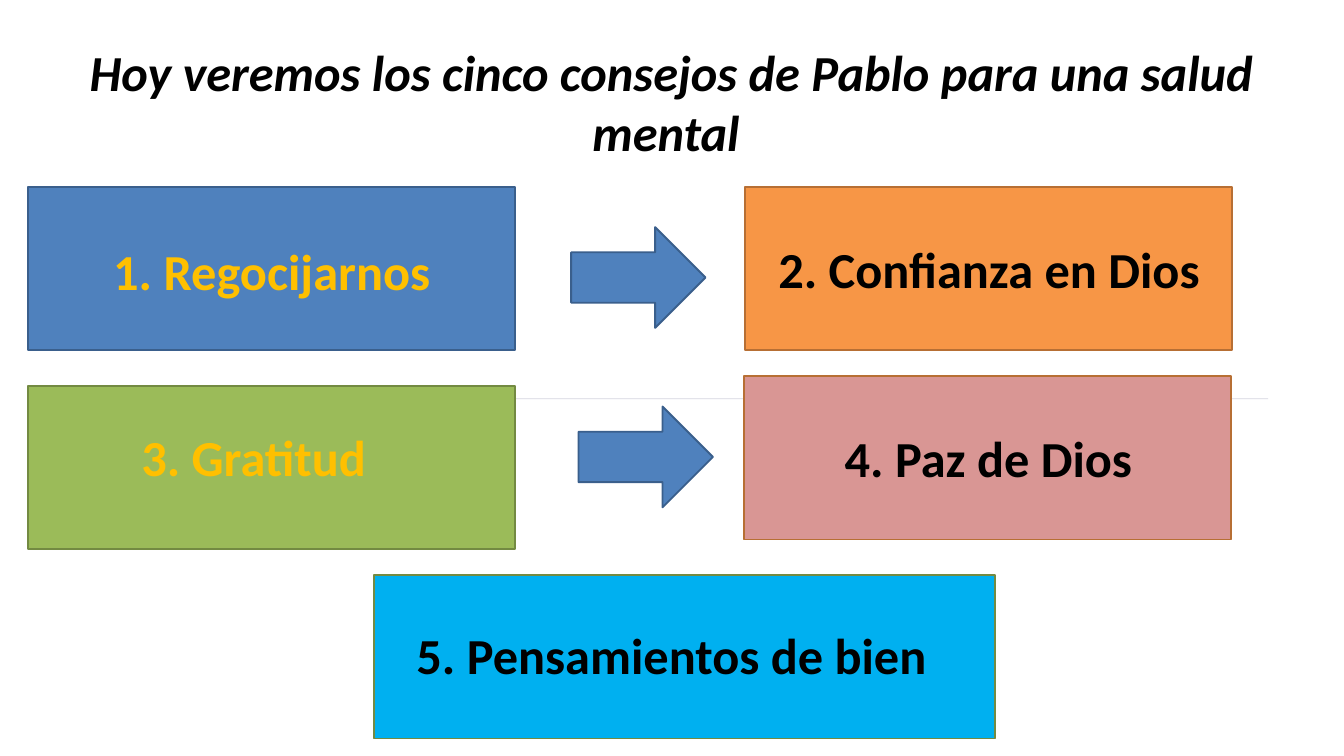
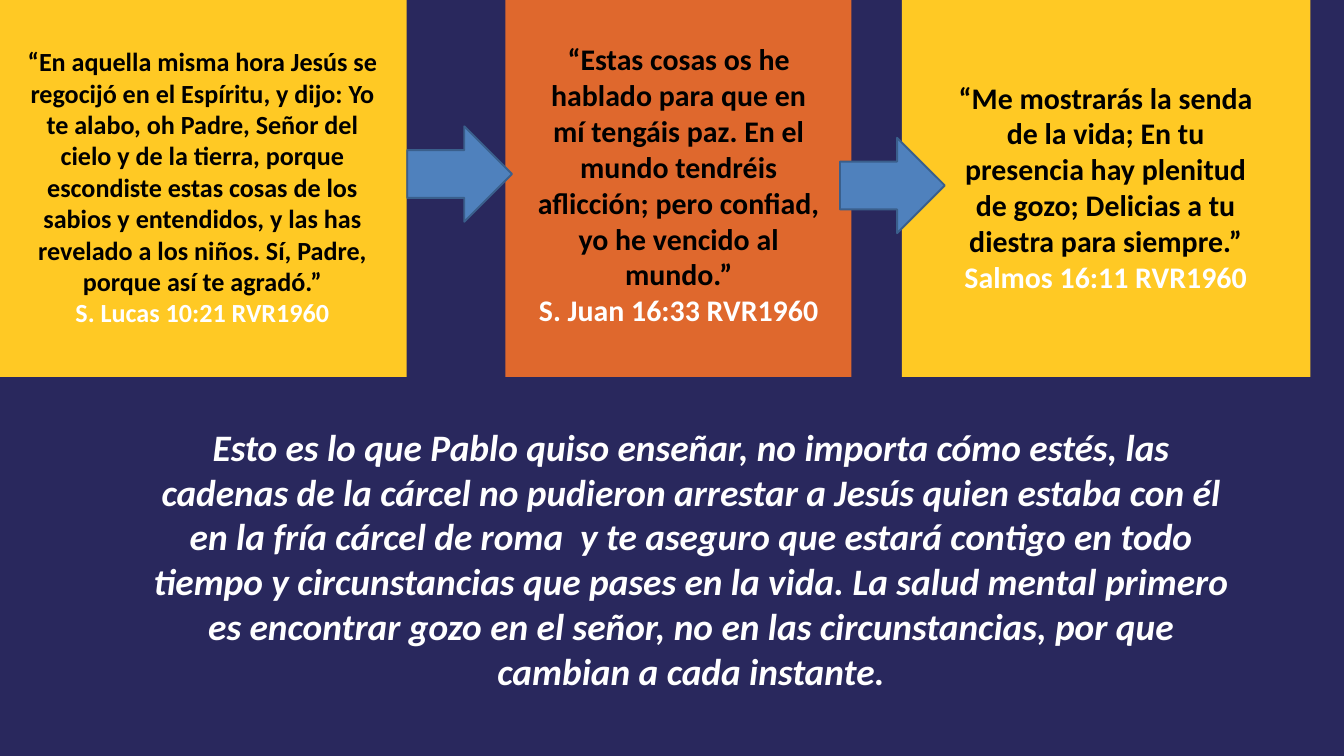
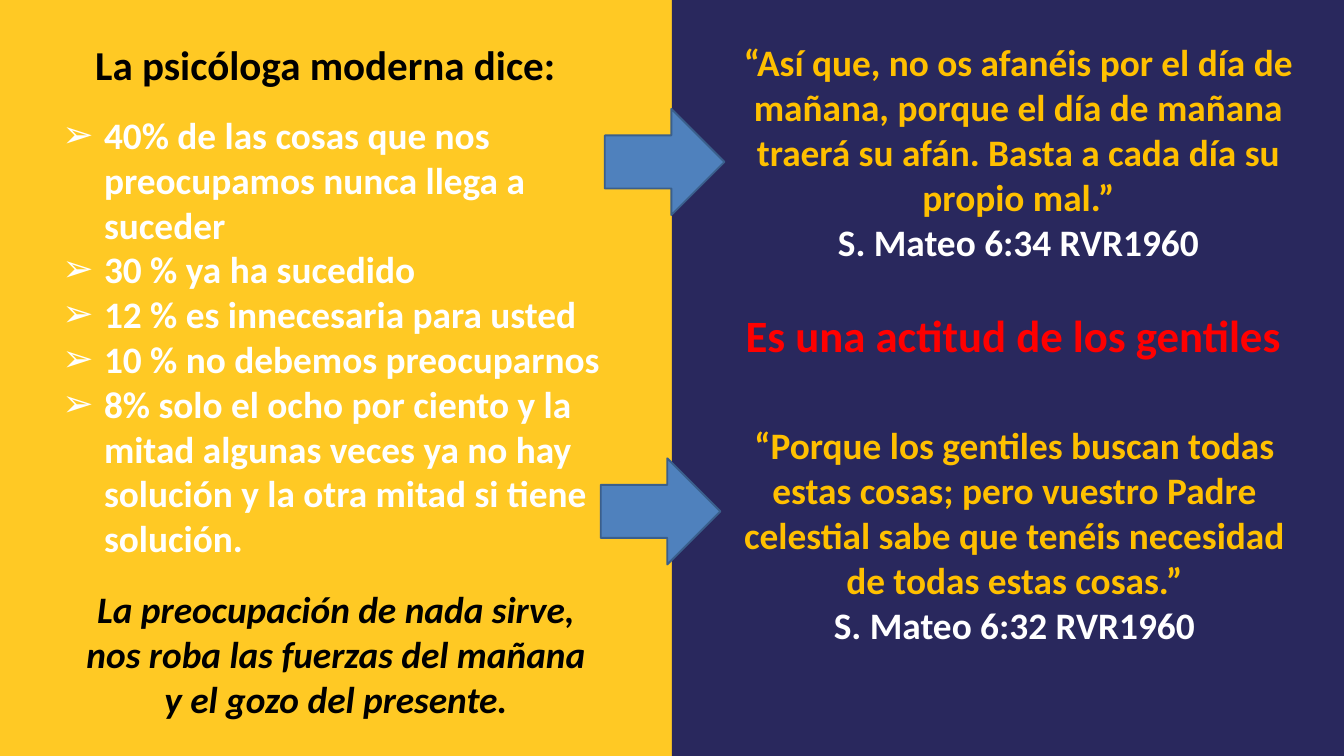
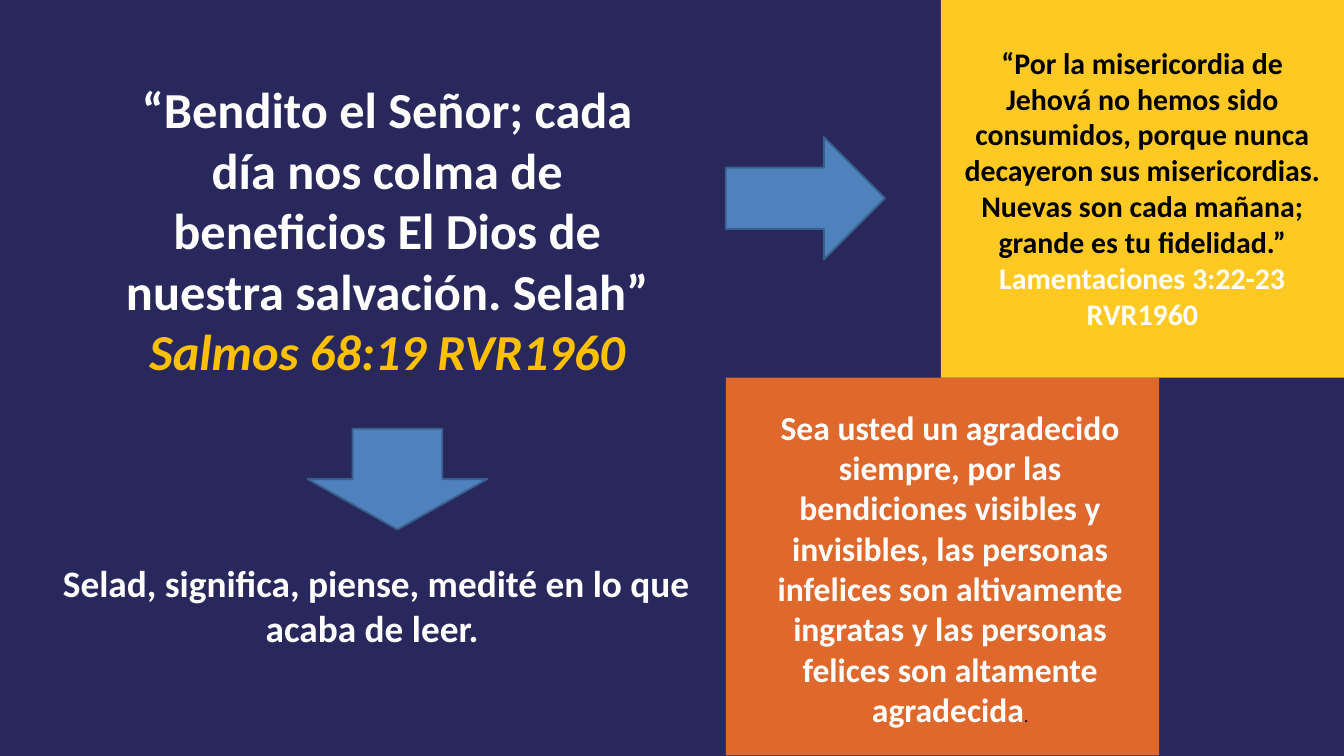
from lxml import etree
from pptx import Presentation
from pptx import util as u
from pptx.dml.color import RGBColor
from pptx.enum import shapes, text
from pptx.oxml import ns

COLORS = {
    "navy": "29285D", "yellow": "FFC924", "orange": "DF682D",
    "white": "FFFFFF", "black": "000000", "gold": "FFC000", "red": "FF0000",
    "blue": "4F81BD", "blue_edge": "3A5F8C",
    "amber": "F79646", "amber_edge": "B76F34",
    "green": "9BBB59", "green_edge": "738A42",
    "rose": "D99694", "sky": "00B0F0",
}
TITLE_ONLY, BLANK = 5, 6


def color(name):
    return RGBColor.from_string(COLORS[name])


class SlideBuilder:
    """Holds the deck style and the page being built."""

    font = "Calibri"
    edge_width = 2

    def __init__(self):
        self.deck = Presentation()
        self.deck.slide_width = u.Inches(20)
        self.deck.slide_height = u.Inches(11.25)
        self.page = None

    def new_page(self, background, layout=BLANK):
        self.page = self.deck.slides.add_slide(self.deck.slide_layouts[layout])
        fill = self.page.background.fill
        fill.solid()
        fill.fore_color.rgb = color(background)

    def shape(self, kind, at, fill, edge=None, opacity=None):
        shape = self.page.shapes.add_shape(kind, *map(u.Inches, at))
        shape.shadow.inherit = False
        shape.fill.solid()
        shape.fill.fore_color.rgb = color(fill)
        if edge:
            shape.line.color.rgb = color(edge)
            shape.line.width = u.Pt(self.edge_width)
        else:
            shape.line.fill.background()
        if opacity:
            tint = shape.fill._xPr.find(".//" + ns.qn("a:srgbClr"))
            etree.SubElement(tint, ns.qn("a:alpha"), val=str(opacity * 1000))

    def panel(self, at, fill, edge=None, opacity=None):
        self.shape(shapes.MSO_SHAPE.RECTANGLE, at, fill, edge, opacity)

    def arrow(self, at, kind=shapes.MSO_SHAPE.RIGHT_ARROW):
        self.shape(kind, at, "blue", "blue_edge")

    def span(self, para, words, size, ink, bold=True, italic=False):
        span = para.add_run()
        span.text = words
        font = span.font
        font.name, font.size = self.font, u.Pt(size)
        font.bold, font.italic = bold, italic
        font.color.rgb = color(ink)

    def prepare(self, frame):
        frame.word_wrap = True
        frame.auto_size = text.MSO_AUTO_SIZE.NONE
        frame.vertical_anchor = text.MSO_ANCHOR.TOP
        para = frame.paragraphs[0]
        para.alignment = text.PP_ALIGN.CENTER
        return para

    def box(self, at):
        return self.page.shapes.add_textbox(*map(u.Inches, at)).text_frame

    def title(self, at, words, size, italic=False):
        title = self.page.shapes.title
        title.left, title.top, title.width, title.height = map(u.Inches, at)
        self.span(self.prepare(title.text_frame), words, size, "black", italic=italic)

    def label(self, at, words, size, ink, italic=False):
        para = self.prepare(self.box(at))
        self.span(para, words, size, ink, italic=italic)
        return para

    def verse(self, at, quote, reference, size, ink, reference_ink="white", italic=False):
        """A quotation with its reference on the following line."""
        para = self.label(at, quote, size, ink)
        para.add_line_break()
        self.span(para, reference, size, reference_ink, italic=italic)

    def bullets(self, at, items, size, ink, indent=0.62):
        frame = self.box(at)
        self.prepare(frame)
        for number, item in enumerate(items):
            para = frame.add_paragraph() if number else frame.paragraphs[0]
            para.alignment = text.PP_ALIGN.LEFT
            self.span(para, item, size, ink)
            props = para._p.get_or_add_pPr()
            props.set("marL", str(u.Inches(indent)))
            props.set("indent", str(-u.Inches(indent)))
            etree.SubElement(props, ns.qn("a:buFont"), typeface="Arial")
            etree.SubElement(props, ns.qn("a:buChar"), char="➢")


def advice_page(show):
    show.new_page("white", TITLE_ONLY)
    show.title((1.12, 0.56, 17.75, 2.22),
               "Hoy veremos los cinco consejos de Pablo para una salud mental ", 54, italic=True)
    show.panel((1.12, 5.93, 17.75, 0.01), "navy", opacity=20)

    # Five pieces of advice: card place, fill, edge, label place, words, ink
    cards = [
        ((0.42, 2.78, 7.25), "blue", "blue_edge",
         (0.92, 3.53, 6.25), "1. Regocijarnos", "gold"),
        ((11.08, 2.78, 7.25), "amber", "amber_edge",
         (11.11, 3.49, 7.22), "2. Confianza en Dios", "black"),
        ((0.42, 5.74, 7.25), "green", "green_edge",
         (0.65, 6.29, 6.25), "3. Gratitud", "gold"),
        ((11.07, 5.6, 7.25), "rose", "amber_edge",
         (11.67, 6.31, 6.08), "4. Paz de Dios", "black"),
        ((5.56, 8.56, 9.25), "sky", "green_edge",
         (5.83, 9.24, 8.33), "5. Pensamientos de bien", "black"),
    ]
    for card, fill, edge, place, words, ink in cards:
        show.panel((*card, 2.43), fill, edge)
        show.label((*place, 1.01), words, 54, ink)
    for left, top in ((8.5, 3.38), (8.61, 6.05)):
        show.arrow((left, top, 2, 1.5))


def joy_page(show):
    show.new_page("navy")

    # Verse panels along the top
    for left, width, fill in ((-0.03, 6.08, "yellow"), (7.52, 5.15, "orange"),
                              (13.42, 6.08, "yellow")):
        show.panel((left, -0.01, width, 5.62), fill)
    show.verse((0.22, 0.63, 5.58, 4.34),
               "“En aquella misma hora Jesús se regocijó en el Espíritu, y dijo: Yo te alabo, "
               "oh Padre, Señor del cielo y de la tierra, porque escondiste estas cosas de los "
               "sabios y entendidos, y las has revelado a los niños. Sí, Padre, porque así te "
               "agradó.”", "S. Lucas 10:21 RVR1960", 28, "black")
    show.verse((7.89, 0.56, 4.42, 4.41),
               "“Estas cosas os he hablado para que en mí tengáis paz. En el mundo tendréis "
               "aflicción; pero confiad, yo he vencido al mundo.”",
               "S. Juan 16:33 RVR1960", 32, "black")
    show.verse((14.08, 1.13, 4.75, 3.33),
               "“Me mostrarás la senda de la vida; En tu presencia hay plenitud de gozo; "
               "Delicias a tu diestra para siempre.”", "Salmos 16:11 RVR1960", 32, "black")

    # Closing thought
    show.label((2.17, 6.26, 16.23, 4.44),
               "Esto es lo que Pablo quiso enseñar, no importa cómo estés, las cadenas de la "
               "cárcel no pudieron arrestar a Jesús quien estaba con él en la fría cárcel de "
               "roma  y te aseguro que estará contigo en todo tiempo y circunstancias que pases "
               "en la vida. La salud mental primero es encontrar gozo en el señor, no en las "
               "circunstancias, por que cambian a cada instante.", 40, "white", italic=True)
    for left, top in ((6.06, 1.88), (12.5, 2.05)):
        show.arrow((left, top, 1.56, 1.42))


def worry_page(show):
    show.new_page("yellow", TITLE_ONLY)
    show.panel((10, 0, 10, 11.25), "navy")

    # What psychology says
    show.title((1, 0.54, 7.83, 0.84), "La psicóloga moderna dice: ", 44)
    show.bullets((0.83, 1.62, 8.94, 8.11), [
        "40% de las cosas que nos preocupamos nunca llega a suceder",
        "30 % ya ha sucedido",
        "12 % es innecesaria para usted",
        "10 % no debemos preocuparnos",
        "8% solo el ocho por ciento y la mitad algunas veces ya no hay solución y la otra "
        "mitad si tiene solución.",
    ], 40, "white")
    show.label((1, 8.68, 8, 2.12),
               "La preocupación de nada sirve, nos roba las fuerzas del mañana y el gozo del "
               "presente.", 40, "black", italic=True)

    # What the gospel says
    show.verse((10.78, 0.54, 8.75, 3.47),
               "“Así que, no os afanéis por el día de mañana, porque el día de mañana traerá su "
               "afán. Basta a cada día su propio mal.”", "S. Mateo 6:34 RVR1960", 40, "gold")
    show.label((10.78, 4.53, 8.75, 1.72), "Es una actitud de los gentiles ", 48, "red")
    show.verse((10.94, 6.24, 8.31, 3.47),
               "“Porque los gentiles buscan todas estas cosas; pero vuestro Padre celestial sabe "
               "que tenéis necesidad de todas estas cosas.”", "S. Mateo 6:32 RVR1960", 40, "gold")
    for left, top in ((9, 1.62), (8.94, 6.82)):
        show.arrow((left, top, 1.78, 1.58))


def gratitude_page(show):
    show.new_page("navy")
    show.panel((10.8, 5.62, 6.45, 5.62), "orange")
    show.panel((14, 0, 6, 5.62), "yellow")

    # Main verse and its meaning
    show.verse((1.6, 1.12, 8.33, 4.64),
               "“Bendito el Señor; cada día nos colma de beneficios El Dios de nuestra "
               "salvación. Selah”", "Salmos 68:19 RVR1960", 54, "white", "gold", italic=True)
    show.label((0.66, 8.29, 9.88, 2.12),
               "Selad, significa, piense, medité en lo que acaba de leer. ", 40, "white")

    # Panels on the right
    show.verse((14.25, 0.61, 5.5, 4.41),
               "“Por la misericordia de Jehová no hemos sido consumidos, porque nunca decayeron "
               "sus misericordias. Nuevas son cada mañana; grande es tu fidelidad.”",
               "Lamentaciones 3:22-23 RVR1960", 32, "black")
    advice = show.label((11.32, 6, 5.64, 5.25),
                        "Sea usted un agradecido siempre, por las bendiciones visibles y "
                        "invisibles, las personas infelices son altivamente ingratas y las "
                        "personas felices son altamente agradecida", 36, "white")
    show.span(advice, ".", 18, "black", bold=False)
    show.arrow((10.8, 2.04, 2.37, 1.82))
    show.arrow((4.58, 6.38, 2.67, 1.5), shapes.MSO_SHAPE.DOWN_ARROW)


def main():
    show = SlideBuilder()
    for build in (advice_page, joy_page, worry_page, gratitude_page):
        build(show)
    show.deck.save("out.pptx")


if __name__ == "__main__":
    main()
